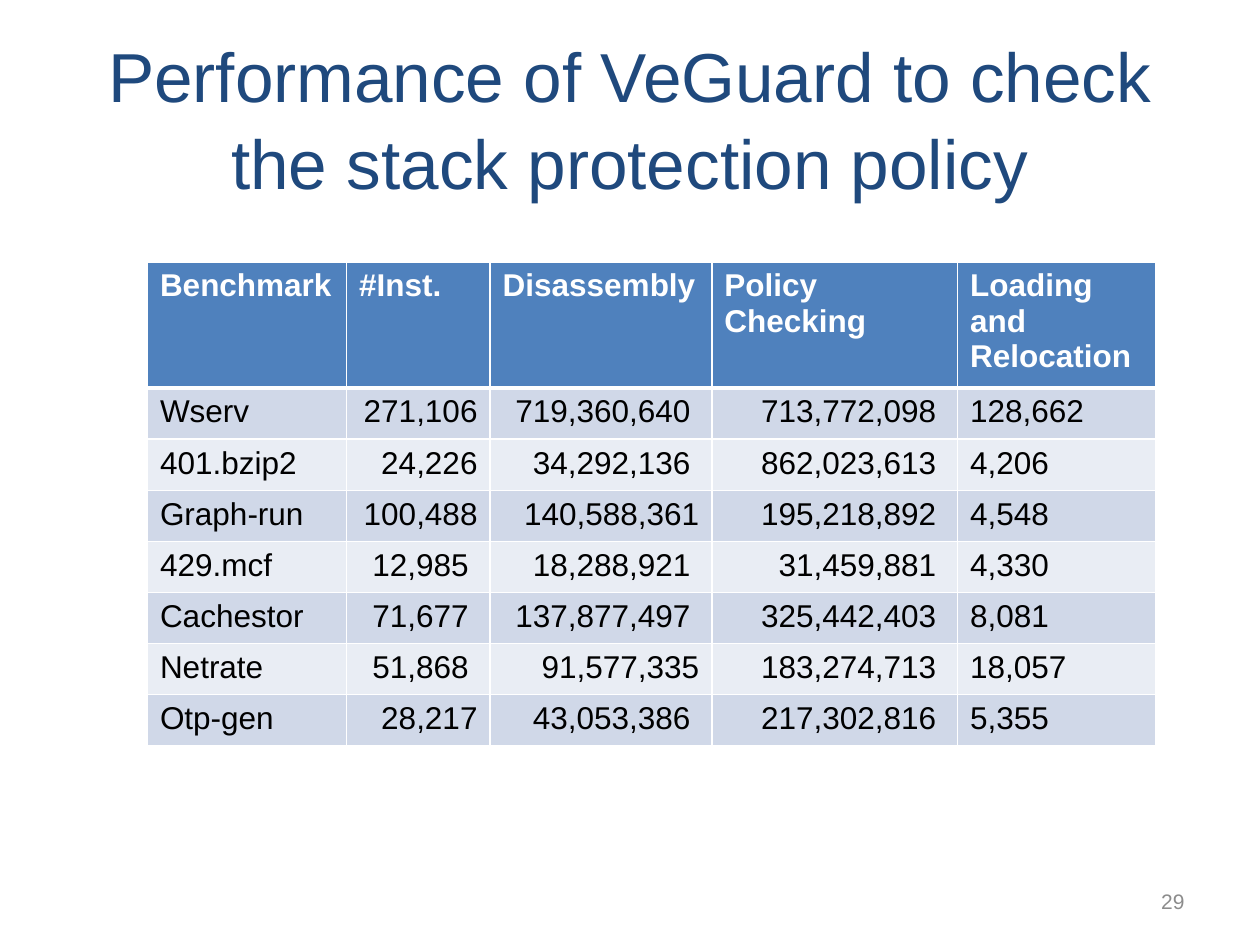
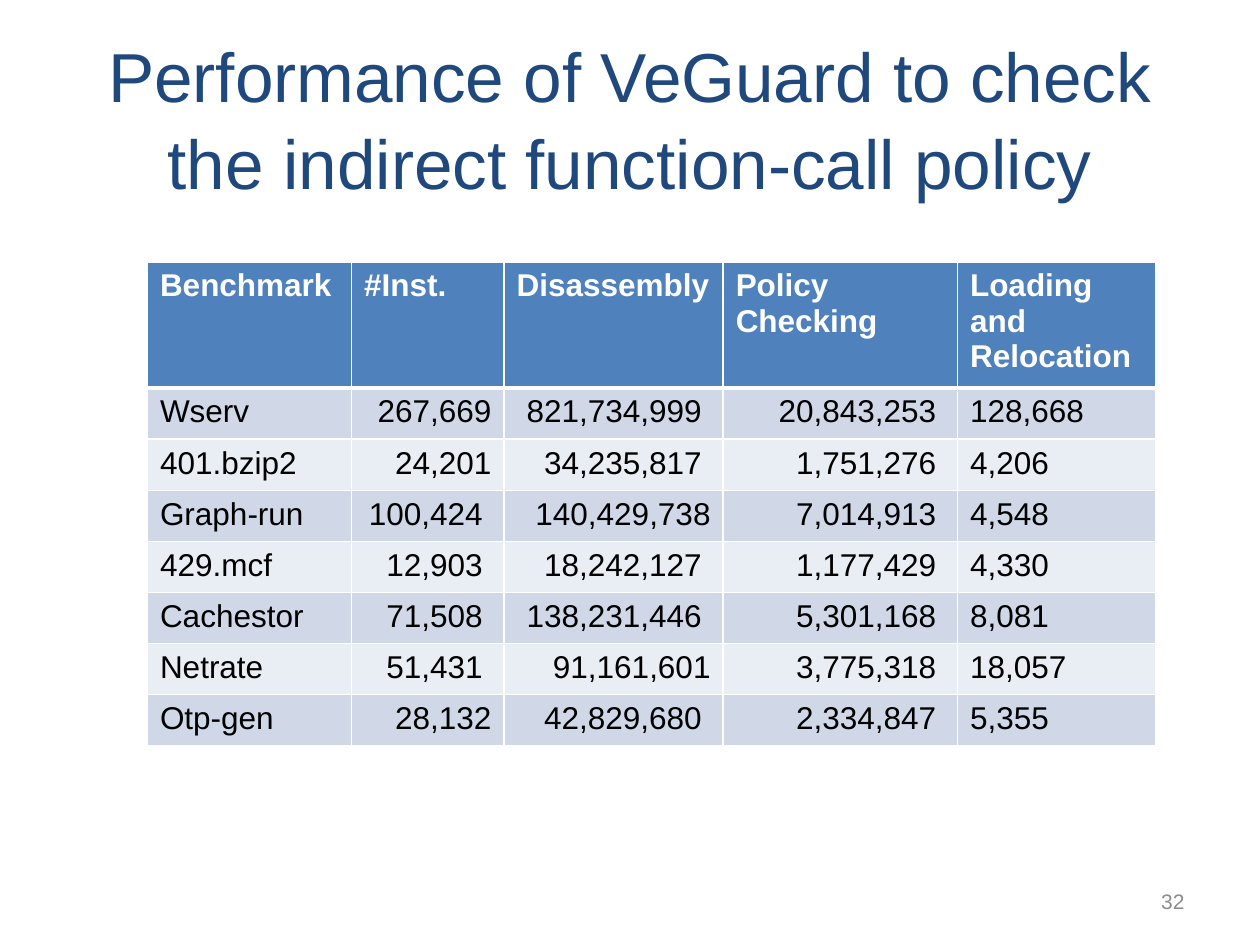
"""Build two slides that tabulate policy-checking performance."""
import lxml.etree
import pptx
import pptx.dml.color
import pptx.enum.text
import pptx.oxml.ns
import pptx.util

Inches, Pt = pptx.util.Inches, pptx.util.Pt
ALIGN = pptx.enum.text.PP_ALIGN

COLORS = {
    "title": "1F497D", "header": "4F81BD", "odd": "D0D8E8", "even": "E9EDF4",
    "border": "FFFFFF", "header_text": "FFFFFF", "text": "000000", "number": "8C8C8C",
}
TITLE = {"size": Pt(39.6), "color": "title"}
NUMBER = {"size": Pt(12), "color": "number"}
HEADER = {"size": Pt(18), "color": "header_text", "bold": True}
BODY = {"size": Pt(18), "color": "text", "bold": False}

BENCHMARKS = ["Wserv", "401.bzip2", "Graph-run", "429.mcf", "Cachestor", "Netrate", "Otp-gen"]
LOADING = ["4,206", "4,548", "4,330", "8,081", "18,057", "5,355"]
CELL_MARGIN, INSET_MARGIN = Inches(0.1), Inches(0.17)

SLIDES = [
    {
        "title": "Performance of VeGuard to check the stack protection policy",
        "number": "29",
        "widths": [1.58, 1.14, 1.76, 1.95, 1.57],
        "policy": "Policy\nChecking",
        "inst": ["271,106", "24,226", "100,488", "12,985", "71,677", "51,868", "28,217"],
        "disassembly": ["719,360,640", "34,292,136", "140,588,361", "18,288,921",
                        "137,877,497", "91,577,335", "43,053,386"],
        "checking": ["713,772,098", "862,023,613", "195,218,892", "31,459,881",
                     "325,442,403", "183,274,713", "217,302,816"],
        "loading": ["128,662"] + LOADING,
        "inset": {1: {4, 5, 6}, 2: {1, 2, 4, 5, 7}, 3: set(range(1, 8))},
    },
    {
        "title": "Performance of VeGuard to check the indirect function-call policy",
        "number": "32",
        "widths": [1.62, 1.21, 1.74, 1.86, 1.57],
        "policy": "Policy Checking",
        "inst": ["267,669", "24,201", "100,424", "12,903", "71,508", "51,431", "28,132"],
        "disassembly": ["821,734,999", "34,235,817", "140,429,738", "18,242,127",
                        "138,231,446", "91,161,601", "42,829,680"],
        "checking": ["20,843,253", "1,751,276", "7,014,913", "1,177,429",
                     "5,301,168", "3,775,318", "2,334,847"],
        "loading": ["128,668"] + LOADING,
        "inset": {1: {3, 4, 5, 6}, 2: {1, 2, 4, 5, 7}, 3: set(range(1, 8))},
    },
]


def rgb(name):
    """Return the named colour."""
    return pptx.dml.color.RGBColor.from_string(COLORS[name])


def put_text(tf, text, fmt, align):
    """Fill a text frame and format its runs."""
    tf.text = text
    for p in tf.paragraphs:
        p.alignment = align
        for r in p.runs:
            r.font.name = "Arial"
            for key, value in fmt.items():
                if key == "color":
                    r.font.color.rgb = rgb(value)
                else:
                    setattr(r.font, key, value)


def add_label(s, box, text, fmt, align, spacing=1.0):
    """Add a wrapped, vertically centred text box."""
    tf = s.shapes.add_textbox(*map(Inches, box)).text_frame
    tf.word_wrap = True
    tf.vertical_anchor = pptx.enum.text.MSO_ANCHOR.MIDDLE
    put_text(tf, text, fmt, align)
    tf.paragraphs[0].line_spacing = spacing


def set_borders(cell, widths):
    """Draw the four borders of a cell with widths in points."""
    qn = pptx.oxml.ns.qn
    tc_pr = cell._tc.get_or_add_tcPr()
    for side, width in widths.items():
        ln = lxml.etree.SubElement(tc_pr, qn(f"a:ln{side}"), w=str(Pt(width)))
        fill = lxml.etree.SubElement(ln, qn("a:solidFill"))
        lxml.etree.SubElement(fill, qn("a:srgbClr"), val=COLORS["border"])


def style_cell(cell, row, col, inset):
    """Set the borders, fill and margins of a cell."""
    set_borders(cell, {"L": 1, "R": 1, "T": 3 if row == 1 else 1, "B": 3 if row == 0 else 1})
    cell.fill.solid()
    cell.fill.fore_color.rgb = rgb("header" if row == 0 else "odd" if row % 2 else "even")
    cell.margin_left = CELL_MARGIN
    cell.margin_right = INSET_MARGIN if row in inset.get(col, ()) else CELL_MARGIN


def add_results(s, data):
    """Add the table of benchmark results."""
    columns = [BENCHMARKS, data["inst"], data["disassembly"], data["checking"], data["loading"]]
    header = ("Benchmark", "#Inst.", "Disassembly", data["policy"], "Loading and Relocation")
    rows = [header, *zip(*columns)]
    frame = s.shapes.add_table(len(rows), len(header), *map(Inches, (1.17, 2.08, 8, 3.84)))
    table = frame.table
    table.first_row = table.horz_banding = False
    for column, width in zip(table.columns, data["widths"]):
        column.width = Inches(width)
    for i, values in enumerate(rows):
        table.rows[i].height = Inches(2.84 / len(BENCHMARKS)) if i else Inches(1)
        for j, value in enumerate(values):
            cell = table.cell(i, j)
            style_cell(cell, i, j, data["inset"])
            align = ALIGN.RIGHT if i and j in (1, 2, 3) else ALIGN.LEFT
            put_text(cell.text_frame, value, BODY if i else HEADER, align)


def main():
    """Build and save the presentation."""
    prs = pptx.Presentation()
    prs.slide_width, prs.slide_height = Inches(10), Inches(7.5)
    for data in SLIDES:
        s = prs.slides.add_slide(prs.slide_layouts[6])
        add_label(s, (0.5, 0.3, 9, 1.25), data["title"], TITLE, ALIGN.CENTER, 1.04)
        add_results(s, data)
        add_label(s, (7.17, 6.95, 2.33, 0.4), data["number"], NUMBER, ALIGN.RIGHT)
    prs.save("out.pptx")


if __name__ == "__main__":
    main()
